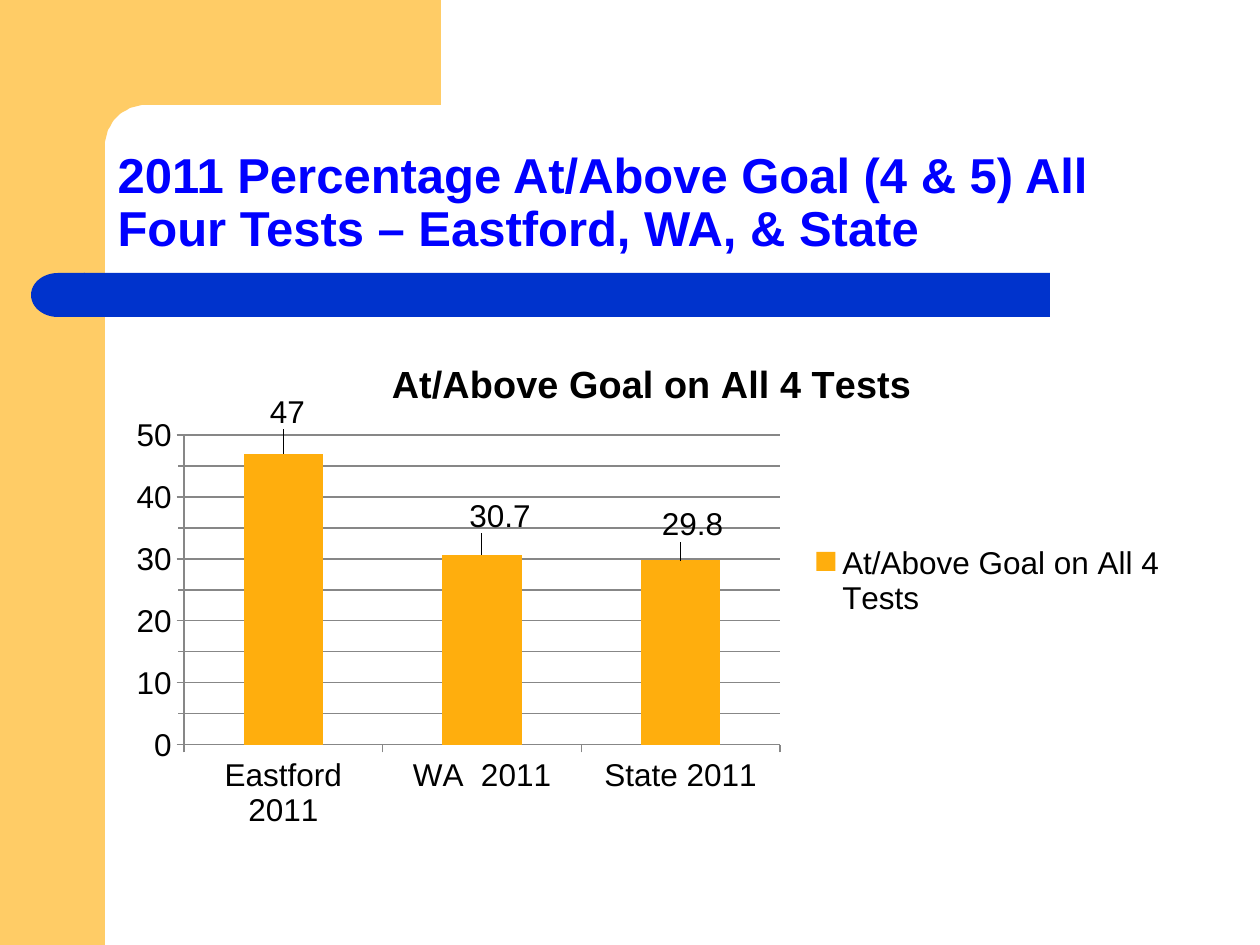
"""Build the slide comparing 2011 goal percentages for Eastford, WA and the state."""
from copy import deepcopy
from math import cos, pi, sin

from lxml.etree import SubElement
from pptx import Presentation
from pptx.chart.data import CategoryChartData
from pptx.dml.color import RGBColor
from pptx.enum.chart import XL_CHART_TYPE, XL_LABEL_POSITION, XL_LEGEND_POSITION, XL_TICK_MARK
from pptx.enum.shapes import MSO_SHAPE
from pptx.enum.text import MSO_ANCHOR, PP_ALIGN
from pptx.oxml.ns import qn
from pptx.util import Emu, Pt

PALE_ORANGE = RGBColor(0xFF, 0xCC, 0x66)
BAR_BLUE = RGBColor(0x00, 0x33, 0xCC)
TITLE_BLUE = RGBColor(0x00, 0x00, 0xFF)
COLUMN_ORANGE = RGBColor(0xFF, 0xAE, 0x0D)
GRID_GRAY = RGBColor(0x87, 0x87, 0x87)
BLACK = RGBColor(0x00, 0x00, 0x00)
SCALE = 914400 / 126
CHART_LEFT, CHART_TOP, CHART_WIDTH, CHART_HEIGHT = 116, 325, 1060, 513


def px(*lengths):
    return [Emu(round(length * SCALE)) for length in lengths]


def set_layout(element, index, **settings):
    for old_layout in element.findall(qn("c:layout")):
        element.remove(old_layout)
    layout = element.makeelement(qn("c:layout"))
    element.insert(index, layout)
    manual = SubElement(layout, qn("c:manualLayout"))
    for name, value in settings.items():
        if not isinstance(value, str):
            value = value / (CHART_WIDTH if name in ("x", "w") else CHART_HEIGHT)
        SubElement(manual, qn(f"c:{name}")).set("val", str(value))


presentation = Presentation()
presentation.slide_width, presentation.slide_height = px(1260, 945)
slide = presentation.slides.add_slide(presentation.slide_layouts[5])

side_band = slide.shapes.add_shape(MSO_SHAPE.RECTANGLE, *px(0, 0, 105, 945))
arc_angles = [step * pi / 32 for step in range(17)]
corner_arc = [(146 - 41 * sin(angle), 146 - 41 * cos(angle)) for angle in arc_angles]
builder = slide.shapes.build_freeform(441, 0, scale=SCALE)
builder.add_line_segments([(441, 105), *corner_arc, (105, 161), (63, 161), (63, 0)])
corner = builder.convert_to_shape()
title_bar = slide.shapes.add_shape(MSO_SHAPE.RECTANGLE, *px(84, 273, 966, 44))
bar_cap = slide.shapes.add_shape(MSO_SHAPE.FLOWCHART_DELAY, *px(31, 273, 54, 44))
bar_cap._element.spPr.xfrm.set("flipH", "1")
for shape, color in (
    (side_band, PALE_ORANGE),
    (corner, PALE_ORANGE),
    (title_bar, BAR_BLUE),
    (bar_cap, BAR_BLUE),
):
    shape.shadow.inherit = False
    shape.fill.solid()
    shape.fill.fore_color.rgb = color
    shape.line.fill.background()

title = slide.shapes.title
title.left, title.top, title.width, title.height = px(105, 105, 1092, 158)
title.text_frame.text = "2011 Percentage At/Above Goal (4 & 5) All Four Tests – Eastford, WA, & State"
title.text_frame.word_wrap = True
title.text_frame.vertical_anchor = MSO_ANCHOR.BOTTOM
paragraph = title.text_frame.paragraphs[0]
paragraph.alignment = PP_ALIGN.LEFT
paragraph.line_spacing = 0.9
title_font = paragraph.runs[0].font
title_font.name = "Arial"
title_font.size = Pt(28)
title_font.bold = True
title_font.color.rgb = TITLE_BLUE

chart_data = CategoryChartData()
chart_data.categories = ["Eastford 2011", "WA  2011", "State 2011"]
chart_data.add_series("At/Above Goal on All 4 Tests", [47, 30.7, 29.8])
chart = slide.shapes.add_chart(
    XL_CHART_TYPE.COLUMN_CLUSTERED,
    *px(CHART_LEFT, CHART_TOP, CHART_WIDTH, CHART_HEIGHT),
    chart_data,
).chart
chart.font.name = "Arial"
chart.font.size = Pt(18)
chart.font.color.rgb = BLACK

chart.has_title = True
chart.chart_title.text_frame.text = "At/Above Goal on All 4 Tests"
chart_title_font = chart.chart_title.text_frame.paragraphs[0].runs[0].font
chart_title_font.name = "Arial"
chart_title_font.size = Pt(21.6)
chart_title_font.bold = True
chart_title_font.color.rgb = BLACK
set_layout(chart.chart_title._element, 1, xMode="edge", yMode="edge", x=269, y=28)

chart.has_legend = True
chart.legend.position = XL_LEGEND_POSITION.RIGHT
chart.legend.include_in_layout = False
set_layout(chart.legend._element, 1, xMode="edge", yMode="edge", x=690, y=216, w=364, h=80)
set_layout(
    chart._chartSpace.chart.plotArea, 0,
    layoutTarget="inner", xMode="edge", yMode="edge", x=68, y=110, w=596, h=310,
)

value_axis = chart.value_axis
value_axis.minimum_scale = 0
value_axis.maximum_scale = 50
value_axis.major_unit = 10
value_axis.minor_unit = 5
value_axis.has_major_gridlines = True
value_axis.has_minor_gridlines = True
value_axis.minor_tick_mark = XL_TICK_MARK.OUTSIDE
for axis in (value_axis, chart.category_axis):
    axis.major_tick_mark = XL_TICK_MARK.OUTSIDE
for line_owner in (value_axis, chart.category_axis, value_axis.major_gridlines):
    line_owner.format.line.color.rgb = GRID_GRAY
    line_owner.format.line.width = Pt(0.75)
major_gridlines = value_axis._element.find(qn("c:majorGridlines"))
minor_gridlines = value_axis._element.find(qn("c:minorGridlines"))
minor_gridlines.append(deepcopy(major_gridlines.find(qn("c:spPr"))))

plot = chart.plots[0]
plot.gap_width = 150
plot.vary_by_categories = False
series = plot.series[0]
series.format.fill.solid()
series.format.fill.fore_color.rgb = COLUMN_ORANGE
series.data_labels.show_value = True
for index, (shift_x, shift_y) in enumerate([(4, -19), (18, -16), (12, -13)]):
    label = series.points[index].data_label
    label.position = XL_LABEL_POSITION.OUTSIDE_END
    label.font.name = "Arial"
    label.font.size = Pt(18)
    label.font.color.rgb = BLACK
    label_element = series._element.findall(f".//{qn('c:dLbl')}")[index]
    set_layout(label_element, 1, x=shift_x, y=shift_y)

presentation.save("out.pptx")
